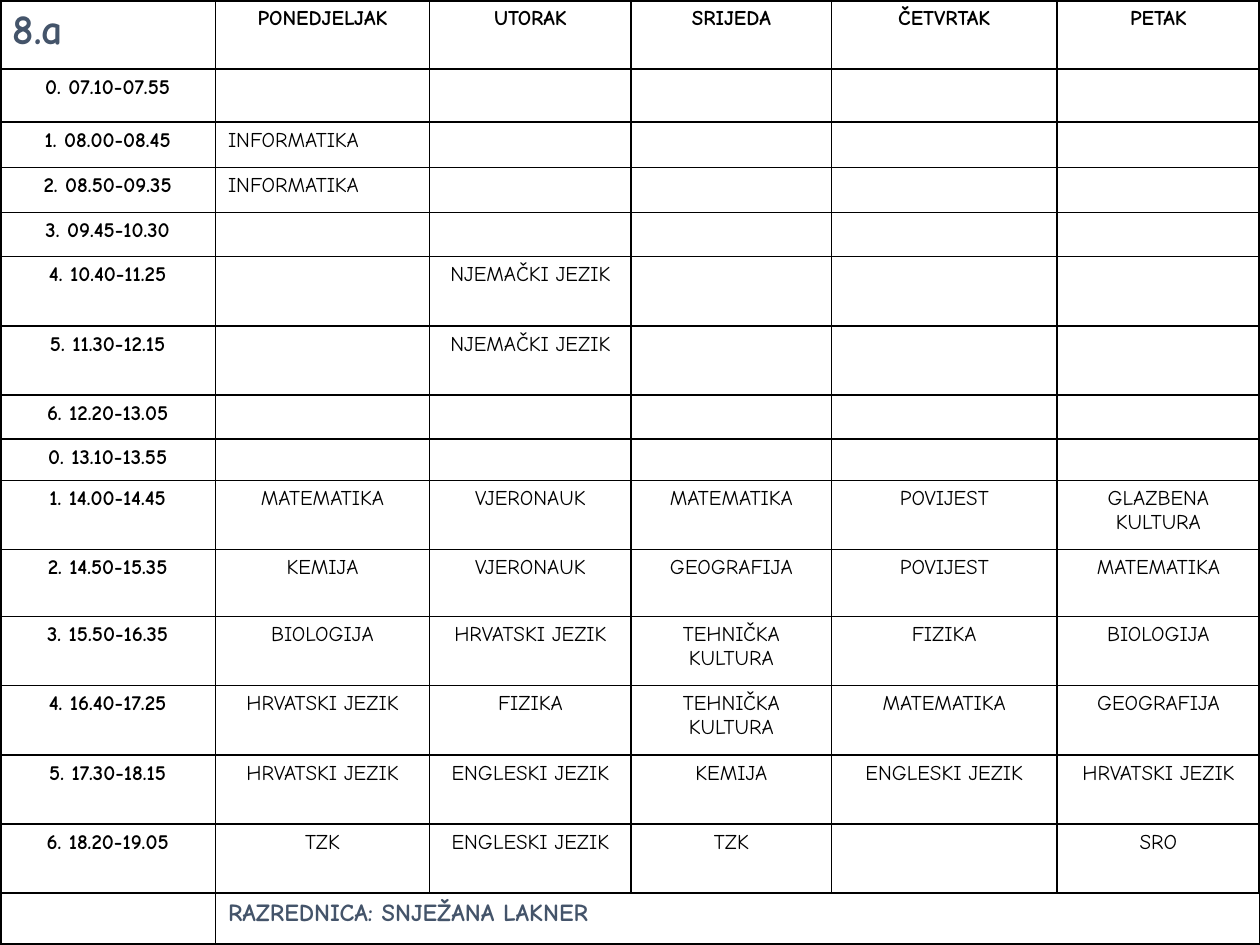
from lxml.etree import SubElement
from pptx import Presentation
from pptx.dml.color import RGBColor
from pptx.enum.text import PP_ALIGN
from pptx.oxml.ns import qn
from pptx.util import Inches, Pt

FONT = "Comic Neue"
BLACK, SLATE = "000000", "44546A"
OUTER_LINE, INNER_LINE = 2.25, 1
COLUMN_WIDTHS = [1.71, 1.7, 1.6, 1.59, 1.79, 1.61]

CLASS_NAME = "8.a"
CLASS_TEACHER = "RAZREDNICA: SNJEŽANA LAKNER"
DAYS = ["PONEDJELJAK", "UTORAK", "SRIJEDA", "ČETVRTAK", "PETAK"]
HEADER_HEIGHT, TEACHER_HEIGHT = 0.55, 0.41

# Row height, period, then one subject for each day
NO_LESSONS = [""] * len(DAYS)
PERIODS = [
    (0.42, "0. 07.10-07.55", NO_LESSONS),
    (0.36, "1. 08.00-08.45", ["INFORMATIKA", "", "", "", ""]),
    (0.36, "2. 08.50-09.35", ["INFORMATIKA", "", "", "", ""]),
    (0.35, "3. 09.45-10.30", NO_LESSONS),
    (0.55, "4. 10.40-11.25", ["", "NJEMAČKI JEZIK", "", "", ""]),
    (0.55, "5. 11.30-12.15", ["", "NJEMAČKI JEZIK", "", "", ""]),
    (0.35, "6. 12.20-13.05", NO_LESSONS),
    (0.33, "0. 13.10-13.55", NO_LESSONS),
    (0.55, "1. 14.00-14.45", ["MATEMATIKA", "VJERONAUK", "MATEMATIKA", "POVIJEST", "GLAZBENA KULTURA"]),
    (0.53, "2. 14.50-15.35", ["KEMIJA", "VJERONAUK", "GEOGRAFIJA", "POVIJEST", "MATEMATIKA"]),
    (0.55, "3. 15.50-16.35", ["BIOLOGIJA", "HRVATSKI JEZIK", "TEHNIČKA KULTURA", "FIZIKA", "BIOLOGIJA"]),
    (0.55, "4. 16.40-17.25", ["HRVATSKI JEZIK", "FIZIKA", "TEHNIČKA KULTURA", "MATEMATIKA", "GEOGRAFIJA"]),
    (0.55, "5. 17.30-18.15", ["HRVATSKI JEZIK", "ENGLESKI JEZIK", "KEMIJA", "ENGLESKI JEZIK", "HRVATSKI JEZIK"]),
    (0.55, "6. 18.20-19.05", ["TZK", "ENGLESKI JEZIK", "TZK", "", "SRO"]),
]


def color(hex_code):
    return RGBColor.from_string(hex_code)


def write_cell(cell, text, size=12, bold=False, hex_code=BLACK, align=PP_ALIGN.CENTER):
    paragraph = cell.text_frame.paragraphs[0]
    if not text:
        # Keep the empty line small enough for the short rows
        end_mark = SubElement(paragraph._p, qn("a:endParaRPr"))
        end_mark.set("sz", str(size * 100))
        return
    paragraph.text = text
    paragraph.alignment = align
    font = paragraph.runs[0].font
    font.name, font.size, font.bold = FONT, Pt(size), bold
    font.color.rgb = color(hex_code)


def draw_borders(cell, widths):
    """Draw the left, right, top and bottom lines, widths in points."""
    properties = cell._tc.get_or_add_tcPr()
    for side, width in zip("LRTB", widths):
        line = SubElement(properties, qn(f"a:ln{side}"), w=str(Pt(width)))
        fill = SubElement(line, qn("a:solidFill"))
        SubElement(fill, qn("a:srgbClr"), val=BLACK)


def style_grid(timetable):
    last_row, last_column = len(timetable.rows) - 1, len(timetable.columns) - 1
    for row in range(last_row + 1):
        for column in range(last_column + 1):
            cell = timetable.cell(row, column)
            on_edge = (column == 0, column == last_column, row == 0, row == last_row)
            draw_borders(cell, [OUTER_LINE if edge else INNER_LINE for edge in on_edge])
            cell.fill.background()


def add_timetable(slide, left, top, width, height):
    row_heights = [HEADER_HEIGHT, *(period[0] for period in PERIODS), TEACHER_HEIGHT]
    frame = slide.shapes.add_table(
        len(row_heights), len(COLUMN_WIDTHS), left, top, width, height)
    timetable = frame.table
    timetable.first_row = timetable.horz_banding = False

    # Scale the grid to the given box
    for column, share in zip(timetable.columns, COLUMN_WIDTHS):
        column.width = int(width * share / sum(COLUMN_WIDTHS))
    for row, share in zip(timetable.rows, row_heights):
        row.height = int(height * share / sum(row_heights))
    style_grid(timetable)

    # Class and days
    write_cell(timetable.cell(0, 0), CLASS_NAME, 24, True, SLATE, PP_ALIGN.LEFT)
    for column, day in enumerate(DAYS, start=1):
        write_cell(timetable.cell(0, column), day, bold=True)

    # Periods and subjects
    for row, (_, period, subjects) in enumerate(PERIODS, start=1):
        write_cell(timetable.cell(row, 0), period, bold=True)
        for column, subject in enumerate(subjects, start=1):
            align = PP_ALIGN.LEFT if subject == "INFORMATIKA" else PP_ALIGN.CENTER
            write_cell(timetable.cell(row, column), subject, align=align)

    # Class teacher
    last_row = len(row_heights) - 1
    write_cell(timetable.cell(last_row, 0), "")
    teacher = timetable.cell(last_row, 1)
    teacher.merge(timetable.cell(last_row, len(DAYS)))
    write_cell(teacher, CLASS_TEACHER, 14, True, SLATE, PP_ALIGN.LEFT)


def main():
    presentation = Presentation()
    presentation.slide_width, presentation.slide_height = Inches(10), Inches(7.5)
    slide = presentation.slides.add_slide(presentation.slide_layouts[6])
    add_timetable(slide, Inches(0), Inches(0), Inches(10), Inches(7.5))
    presentation.save("out.pptx")


if __name__ == "__main__":
    main()
